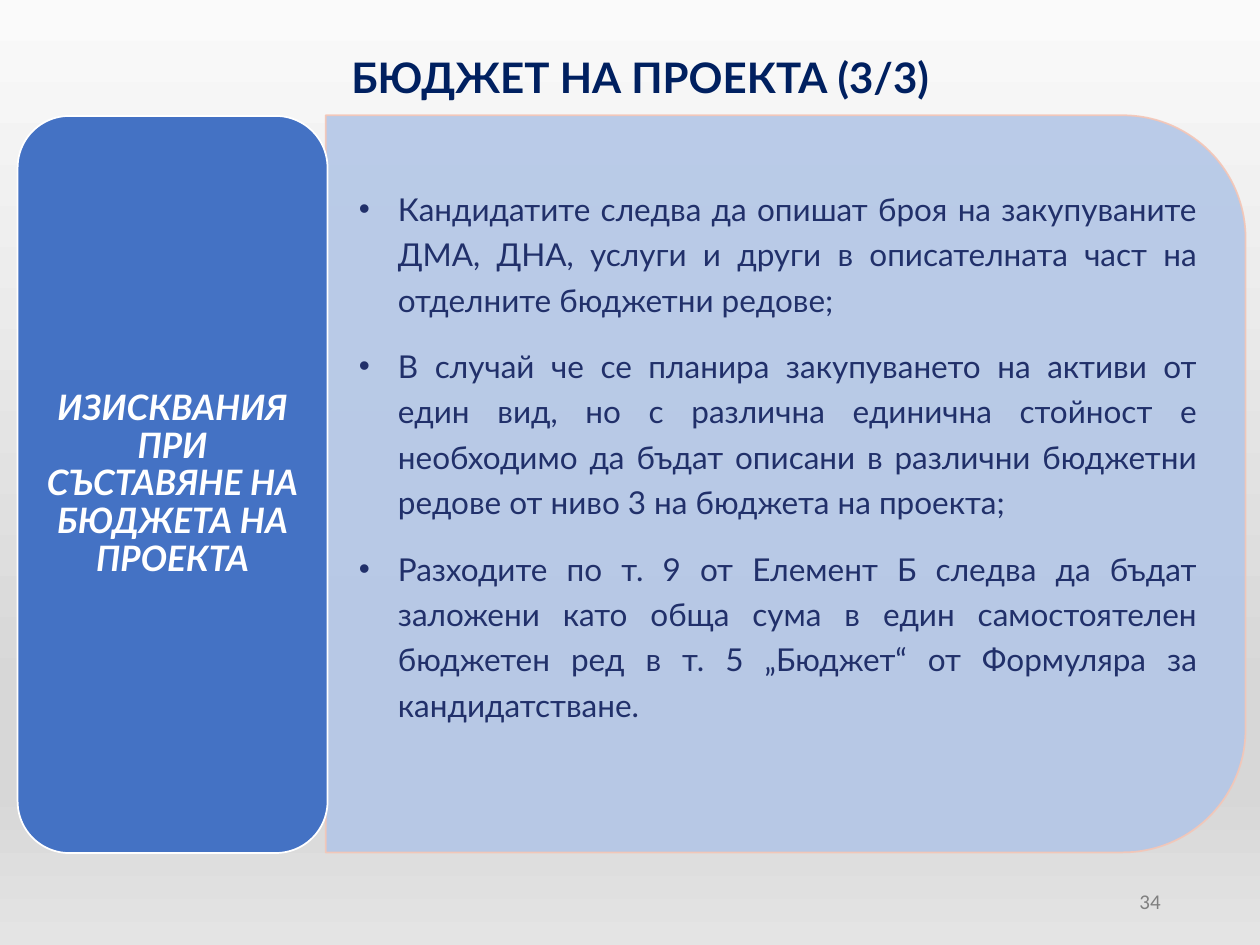
from lxml import etree
from pptx import Presentation
from pptx import util as u
from pptx.dml.color import RGBColor
from pptx.enum import shapes, text
from pptx.oxml.ns import qn

COLORS = {
    "title": "002060", "body": "21306A", "number": "808080", "white": "FFFFFF",
    "label": "4472C4", "panel": "B4C7E7", "panel_line": "F5C6B6",
}
BACKGROUND = [(0, "FAFAFA"), (74, "D7D7D7"), (83, "D7D7D7"), (100, "E4E4E4")]
REQUIREMENTS = [
    "Кандидатите следва да опишат броя на закупуваните ДМА, ДНА, услуги и други "
    "в описателната част на отделните бюджетни редове;",
    "В случай че се планира закупуването на активи от един вид, но с различна "
    "единична стойност е необходимо да бъдат описани в различни бюджетни редове "
    "от ниво 3 на бюджета на проекта;",
    "Разходите по т. 9 от Елемент Б следва да бъдат заложени като обща сума в един "
    "самостоятелен бюджетен ред в т. 5 „Бюджет“ от Формуляра за кандидатстване.",
]


def rgb(name):
    return RGBColor.from_string(COLORS[name])


def set_opacity(fill, percent):
    color = fill._xPr.find(qn("a:solidFill"))[0]
    etree.SubElement(color, qn("a:alpha"), val=str(percent * 1000))


def add_bullet(paragraph, indent):
    properties = paragraph._p.get_or_add_pPr()
    properties.set("marL", str(u.Inches(indent)))
    properties.set("indent", str(-u.Inches(indent)))
    etree.SubElement(properties, qn("a:buFont"), typeface="Arial")
    etree.SubElement(properties, qn("a:buChar"), char="•")


def write(paragraph, content, size, color, font="Lato", bold=False, italic=False,
          align=text.PP_ALIGN.CENTER, line_spacing=None, space=None, bullet=None):
    paragraph.alignment = align
    paragraph.line_spacing = line_spacing
    if space is not None:
        paragraph.space_before = paragraph.space_after = u.Pt(space)
    if bullet:
        add_bullet(paragraph, bullet)
    run = paragraph.add_run()
    run.text = content
    run.font.name, run.font.size = font, u.Pt(size)
    run.font.bold, run.font.italic = bold, italic
    run.font.color.rgb = rgb(color)


class SlideBuilder:
    """Holds the style and the current slide, and adds elements to it."""

    def __init__(self, presentation):
        self.slide = presentation.slides.add_slide(presentation.slide_layouts[6])

    def background(self, stops):
        fill = self.slide.background.fill
        fill.gradient()
        fill.gradient_angle = 270
        stop_list = next(self.slide.element.iter(qn("a:gsLst")))
        for stop in list(stop_list):
            stop_list.remove(stop)
        for position, color in stops:
            stop = etree.SubElement(stop_list, qn("a:gs"), pos=str(position * 1000))
            etree.SubElement(stop, qn("a:srgbClr"), val=color)

    def box(self, kind, bounds, fill, line, rotation=0, opacity=None):
        shape = self.slide.shapes.add_shape(kind, *map(u.Inches, bounds))
        shape.shadow.inherit = False
        shape.rotation = rotation
        shape.fill.solid()
        shape.fill.fore_color.rgb = rgb(fill)
        shape.line.color.rgb = rgb(line)
        shape.line.width = u.Pt(1)
        if opacity:
            set_opacity(shape.fill, opacity)
            set_opacity(shape.line.fill, opacity)
        return shape

    def label(self, shape, content, **style):
        frame = shape.text_frame
        frame.word_wrap = True
        frame.vertical_anchor = text.MSO_ANCHOR.MIDDLE
        frame.margin_left = frame.margin_right = u.Inches(0.08)
        frame.margin_top = frame.margin_bottom = u.Inches(0.04)
        write(frame.paragraphs[0], content, **style)

    def textbox(self, bounds, contents, anchor=text.MSO_ANCHOR.TOP, **style):
        frame = self.slide.shapes.add_textbox(*map(u.Inches, bounds)).text_frame
        frame.word_wrap = True
        frame.vertical_anchor = anchor
        for index, content in enumerate(contents):
            paragraph = frame.add_paragraph() if index else frame.paragraphs[0]
            write(paragraph, content, **style)


def main():
    presentation = Presentation()
    presentation.slide_width, presentation.slide_height = u.Inches(10), u.Inches(7.5)
    builder = SlideBuilder(presentation)
    builder.background(BACKGROUND)
    builder.textbox((7.06, 6.95, 2.25, 0.4), ["34"], anchor=text.MSO_ANCHOR.MIDDLE,
                    size=12, color="number", font="Calibri", align=text.PP_ALIGN.RIGHT)
    builder.box(shapes.MSO_SHAPE.ROUND_2_SAME_RECTANGLE, (3.31, 0.19, 5.85, 7.3),
                "panel", "panel_line", rotation=90, opacity=90)
    label = builder.box(shapes.MSO_SHAPE.ROUNDED_RECTANGLE, (0.14, 0.92, 2.46, 5.85),
                        "label", "white")
    builder.label(label, "ИЗИСКВАНИЯ ПРИ СЪСТАВЯНЕ НА БЮДЖЕТА НА ПРОЕКТА", size=20,
                  color="white", bold=True, italic=True, line_spacing=0.9)
    builder.textbox((2.75, 1.4, 6.85, 4.6), REQUIREMENTS, size=18, color="body",
                    align=text.PP_ALIGN.JUSTIFY, line_spacing=1.2, space=6, bullet=0.31)
    builder.textbox((0.59, 0.36, 8.98, 0.71), ["БЮДЖЕТ НА ПРОЕКТА (3/3)"], size=24,
                    color="title", bold=True)
    presentation.save("out.pptx")


if __name__ == "__main__":
    main()
